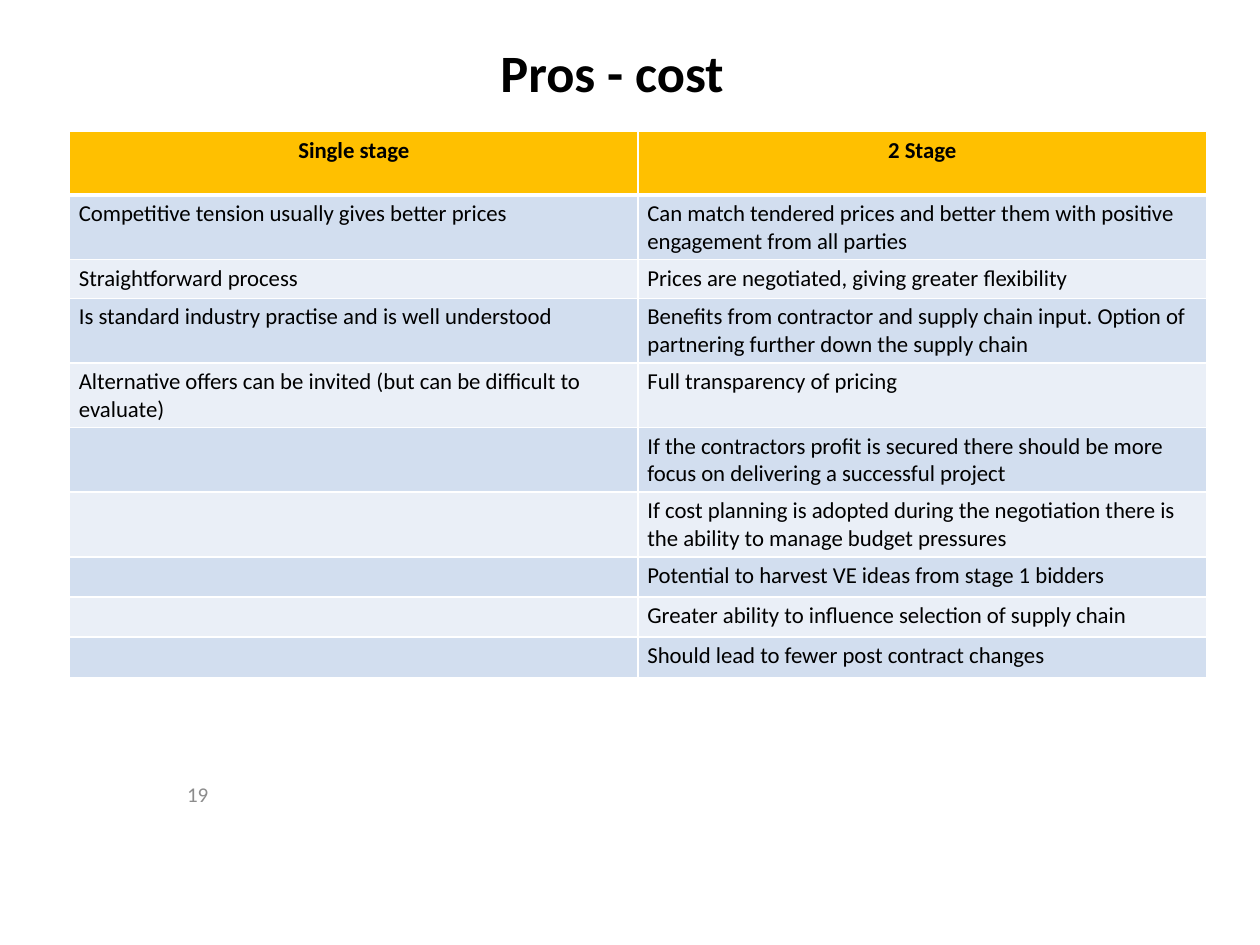
from lxml import etree
from pptx import Presentation
from pptx.dml.color import RGBColor
from pptx.enum import text
from pptx.oxml import ns
from pptx.util import Cm, Pt

BLACK = RGBColor(0x00, 0x00, 0x00)
GREY = RGBColor(0x8C, 0x8C, 0x8C)
WHITE = RGBColor(0xFF, 0xFF, 0xFF)
AMBER = RGBColor(0xFF, 0xC0, 0x00)
BANDS = (RGBColor(0xD2, 0xDE, 0xEF), RGBColor(0xEA, 0xEF, 0xF7))
FONT = "Calibri"
CELL_SIZE = 13

ROWS = [
    ("Single stage", "2 Stage", 1.28),
    ("Competitive tension usually gives better prices",
     "Can match tendered prices and better them with positive engagement from all parties", 1.29),
    ("Straightforward process",
     "Prices are negotiated, giving greater flexibility", 0.78),
    ("Is standard industry practise and is well understood",
     "Benefits from contractor and supply chain input. Option of partnering further down "
     "the supply chain", 1.29),
    ("Alternative offers can be invited (but can be difficult to evaluate)",
     "Full transparency of pricing", 1.29),
    ("", "If the contractors profit is secured there should be more focus on delivering "
     "a successful project", 1.29),
    ("", "If cost planning is adopted during the negotiation there is the ability to manage "
     "budget pressures", 1.29),
    ("", "Potential to harvest VE ideas from stage 1 bidders", 0.81),
    ("", "Greater ability to influence selection of supply chain", 0.81),
    ("", "Should lead to fewer post contract changes", 0.81),
]


def style_paragraph(p, size, color, bold, align):
    p.alignment = align
    p.font.name = FONT
    p.font.size = Pt(size)
    p.font.bold = bold
    p.font.color.rgb = color


def add_label(s, content, box, size, color, bold, align):
    tf = s.shapes.add_textbox(*map(Cm, box)).text_frame
    tf.word_wrap = True
    tf.vertical_anchor = text.MSO_ANCHOR.MIDDLE
    tf.text = content
    style_paragraph(tf.paragraphs[0], size, color, bold, align)


def set_borders(cell, widths):
    tc_pr = cell._tc.get_or_add_tcPr()
    for side, width in widths.items():
        ln = etree.SubElement(tc_pr, ns.qn(f"a:ln{side}"), w=str(Pt(width)))
        fill = etree.SubElement(ln, ns.qn("a:solidFill"))
        etree.SubElement(fill, ns.qn("a:srgbClr"), val=str(WHITE))


def fill_cell(cell, content, row):
    header = row == 0
    set_borders(cell, {"L": 1, "R": 1, "T": 3 if row == 1 else 1, "B": 3 if header else 1})
    cell.fill.solid()
    cell.fill.fore_color.rgb = AMBER if header else BANDS[(row - 1) % 2]
    cell.margin_left = cell.margin_right = Cm(0.19)
    cell.margin_top = cell.margin_bottom = Cm(0.1)
    p = cell.text_frame.paragraphs[0]
    if content:
        p.text = content
    style_paragraph(p, CELL_SIZE, BLACK, header,
                    text.PP_ALIGN.CENTER if header else text.PP_ALIGN.LEFT)
    if not content:
        etree.SubElement(p._p, ns.qn("a:endParaRPr"), sz=str(CELL_SIZE * 100))


def add_comparison(s):
    height = sum(h for _, _, h in ROWS)
    table = s.shapes.add_table(len(ROWS), 2, Cm(1.4), Cm(2.65), Cm(22.92), Cm(height)).table
    for i, (single, two, row_height) in enumerate(ROWS):
        table.rows[i].height = Cm(row_height)
        for j, content in enumerate((single, two)):
            fill_cell(table.cell(i, j), content, i)


def main():
    prs = Presentation()
    prs.slide_width, prs.slide_height = Cm(25.4), Cm(19.05)
    s = prs.slides.add_slide(prs.slide_layouts[6])
    add_label(s, "19", (0, 15.62, 4.45, 0.76), 12, GREY, False, text.PP_ALIGN.RIGHT)
    add_label(s, "Pros - cost", (3.3, 0.33, 18.08, 2.24), 30, BLACK, True, text.PP_ALIGN.CENTER)
    add_comparison(s)
    prs.save("out.pptx")


if __name__ == "__main__":
    main()
